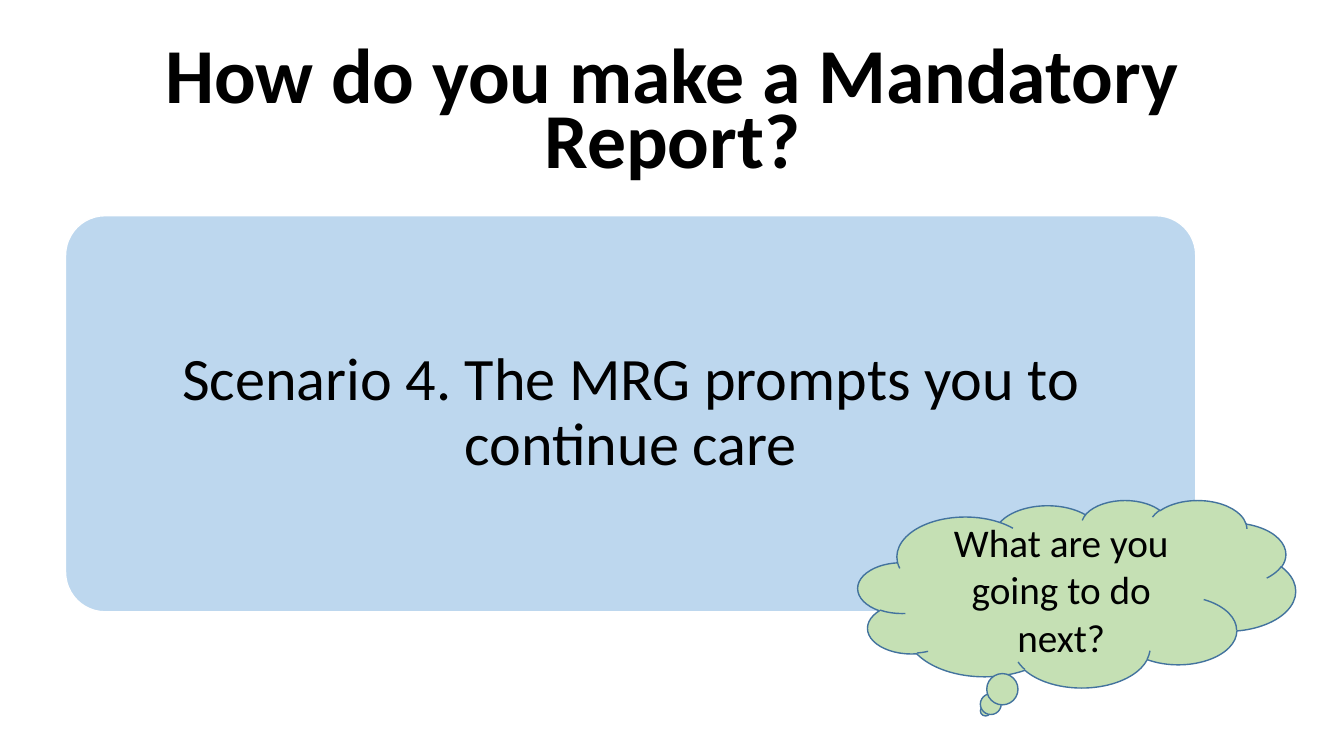
from dataclasses import dataclass
from typing import Optional

from pptx import Presentation
from pptx.dml.color import RGBColor
from pptx.enum.shapes import MSO_SHAPE as SHAPE
from pptx.enum.text import MSO_ANCHOR as ANCHOR, PP_ALIGN as ALIGN
from pptx.util import Emu, Pt

PX = 9144  # 100 px to the inch
BLACK = RGBColor(0x00, 0x00, 0x00)
WHITE = RGBColor(0xFF, 0xFF, 0xFF)
PALE_BLUE = RGBColor(0xBD, 0xD7, 0xEE)
PALE_GREEN = RGBColor(0xC5, 0xE0, 0xB4)
STEEL_BLUE = RGBColor(0x43, 0x73, 0x9E)


@dataclass
class Block:
    text: str
    box: tuple[int, int, int, int]
    size: float
    bold: bool = False
    spacing: float = 1.0
    anchor: ANCHOR = ANCHOR.MIDDLE
    margins: tuple[int, int] = (10, 5)
    kind: Optional[SHAPE] = None
    fill: Optional[RGBColor] = None
    line: Optional[RGBColor] = None
    corner: Optional[float] = None


BLOCKS = [
    Block("Scenario 4. The MRG prompts you to continue care", (65, 214, 1121, 393), 43,
          spacing=0.9, margins=(18, 18), kind=SHAPE.ROUNDED_RECTANGLE,
          fill=PALE_BLUE, line=WHITE, corner=0.1),
    Block("How do you make a Mandatory Report?", (92, 40, 1150, 145), 55.5,
          bold=True, spacing=0.7, anchor=ANCHOR.BOTTOM),
    Block("What are you going to do next?", (851, 496, 434, 186), 28,
          kind=SHAPE.CLOUD_CALLOUT, fill=PALE_GREEN, line=STEEL_BLUE),
]


def px(n: int) -> Emu:
    return Emu(n * PX)


def set_all(target, values: dict) -> None:
    for name, value in values.items():
        setattr(target, name, value)


def add_block(slide, block: Block) -> None:
    """Draw a filled shape, or a plain text box when the block has no kind."""
    box = [px(n) for n in block.box]
    if block.kind is None:
        sp = slide.shapes.add_textbox(*box)
    else:
        sp = slide.shapes.add_shape(block.kind, *box)
        sp.shadow.inherit = False
        sp.fill.solid()
        sp.fill.fore_color.rgb = block.fill
        sp.line.color.rgb = block.line
        sp.line.width = Pt(1)
    if block.corner is not None:
        sp.adjustments[0] = block.corner

    side, edge = (px(n) for n in block.margins)
    tf = sp.text_frame
    set_all(tf, {"word_wrap": True, "vertical_anchor": block.anchor,
                 "margin_left": side, "margin_right": side,
                 "margin_top": edge, "margin_bottom": edge})
    p = tf.paragraphs[0]
    set_all(p, {"alignment": ALIGN.CENTER, "line_spacing": block.spacing})
    r = p.add_run()
    r.text = block.text
    set_all(r.font, {"name": "Calibri", "size": Pt(block.size), "bold": block.bold})
    r.font.color.rgb = BLACK


def main() -> None:
    prs = Presentation()
    set_all(prs, {"slide_width": px(1333), "slide_height": px(750)})
    slide = prs.slides.add_slide(prs.slide_layouts[6])
    for block in BLOCKS:
        add_block(slide, block)
    prs.save("out.pptx")


if __name__ == "__main__":
    main()
